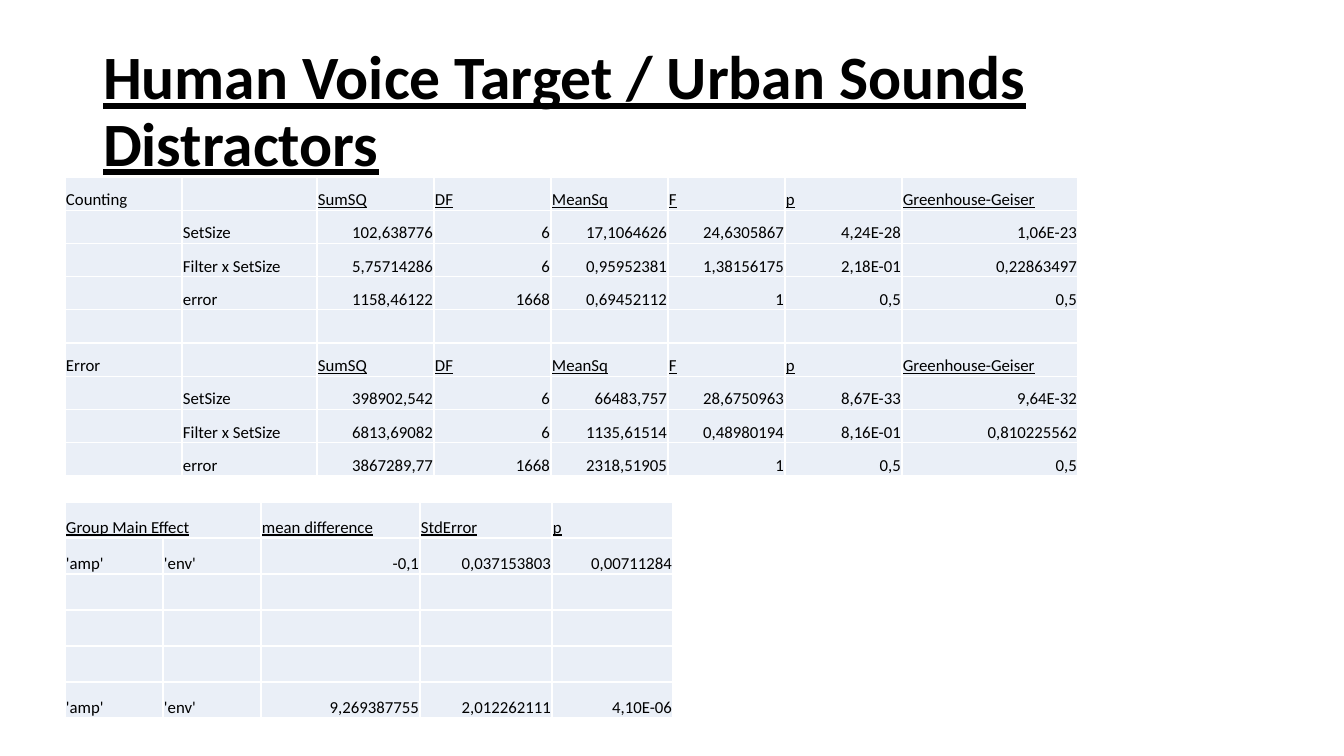
from lxml import etree
from pptx import Presentation
from pptx.dml.color import RGBColor
from pptx.enum.text import MSO_ANCHOR as Anchor, MSO_AUTO_SIZE as AutoSize, PP_ALIGN as Align
from pptx.oxml.ns import qn
from pptx.util import Pt

PX = 12192000 / 1344
FONT = "Calibri"
BLACK = RGBColor(0x00, 0x00, 0x00)
WHITE = RGBColor(0xFF, 0xFF, 0xFF)
PALE_BLUE = RGBColor(0xEA, 0xEF, 0xF7)


def px(length):
    return round(length * PX)


def add_borders(cell):
    properties = cell._tc.get_or_add_tcPr()
    for side in ("lnL", "lnR", "lnT", "lnB"):
        line = etree.SubElement(properties, qn(f"a:{side}"), w=str(Pt(1)))
        fill = etree.SubElement(line, qn("a:solidFill"))
        etree.SubElement(fill, qn("a:srgbClr"), val=str(WHITE))


# Page
deck = Presentation()
deck.slide_width, deck.slide_height = px(1344), px(756)
page = deck.slides.add_slide(deck.slide_layouts[5])

# Title
title = page.shapes.title
title.left, title.top, title.width, title.height = px(93), px(40), px(1211), px(146)
frame = title.text_frame
frame.text = "Human Voice Target / Urban Sounds Distractors"
frame.word_wrap = True
frame.auto_size = AutoSize.NONE
frame.vertical_anchor = Anchor.MIDDLE
para = frame.paragraphs[0]
para.alignment = Align.LEFT
para.line_spacing = 0.9
para.font.name, para.font.size = FONT, Pt(44)
para.font.bold = para.font.underline = True
para.font.color.rgb = BLACK

# Table contents
MEASURES = ["SumSQ", "DF", "MeanSq", "F", "p", "Greenhouse-Geiser"]
EFFECTS = ["Group Main Effect", "", "mean difference", "StdError", "p"]
HEADINGS = set(MEASURES + EFFECTS)

anova_rows = [
    ["Counting", "", *MEASURES],
    ["", "SetSize", "102,638776", "6", "17,1064626", "24,6305867", "4,24E-28", "1,06E-23"],
    ["", "Filter x SetSize", "5,75714286", "6", "0,95952381", "1,38156175", "2,18E-01", "0,22863497"],
    ["", "error", "1158,46122", "1668", "0,69452112", "1", "0,5", "0,5"],
    [""] * 8,
    ["Error", "", *MEASURES],
    ["", "SetSize", "398902,542", "6", "66483,757", "28,6750963", "8,67E-33", "9,64E-32"],
    ["", "Filter x SetSize", "6813,69082", "6", "1135,61514", "0,48980194", "8,16E-01", "0,810225562"],
    ["", "error", "3867289,77", "1668", "2318,51905", "1", "0,5", "0,5"],
]
group_rows = [
    EFFECTS,
    ["'amp'", "'env'", "-0,1", "0,037153803", "0,00711284"],
    *[[""] * 5] * 3,
    ["'amp'", "'env'", "9,269387755", "2,012262111", "4,10E-06"],
]

# Tables: top, height, column widths, rows
tables = [
    (177, 299, [117, 135, 117, 117, 117, 117, 117, 176], anova_rows),
    (502, 216, [98, 98, 159, 132, 121], group_rows),
]
for top, height, widths, rows in tables:
    table = page.shapes.add_table(
        len(rows), len(widths), px(65), px(top), px(sum(widths)), px(height)
    ).table
    table.first_row = table.horz_banding = False
    for column, width in zip(table.columns, widths):
        column.width = px(width)
    for r, row in enumerate(rows):
        table.rows[r].height = px(height / len(rows))
        for c, text in enumerate(row):
            cell = table.cell(r, c)
            add_borders(cell)
            cell.fill.solid()
            cell.fill.fore_color.rgb = PALE_BLUE
            cell.margin_left = cell.margin_right = cell.margin_top = px(1)
            cell.margin_bottom = 0
            cell.vertical_anchor = Anchor.BOTTOM
            cell.text = text
            para = cell.text_frame.paragraphs[0]
            is_number = text.lstrip("-")[:1].isdigit()
            para.alignment = Align.RIGHT if is_number else Align.LEFT
            para.font.name, para.font.size = FONT, Pt(12)
            para.font.color.rgb = BLACK
            para.font.underline = text in HEADINGS

# The group heading covers both group columns
table.cell(0, 0).merge(table.cell(0, 1))

deck.save("out.pptx")
